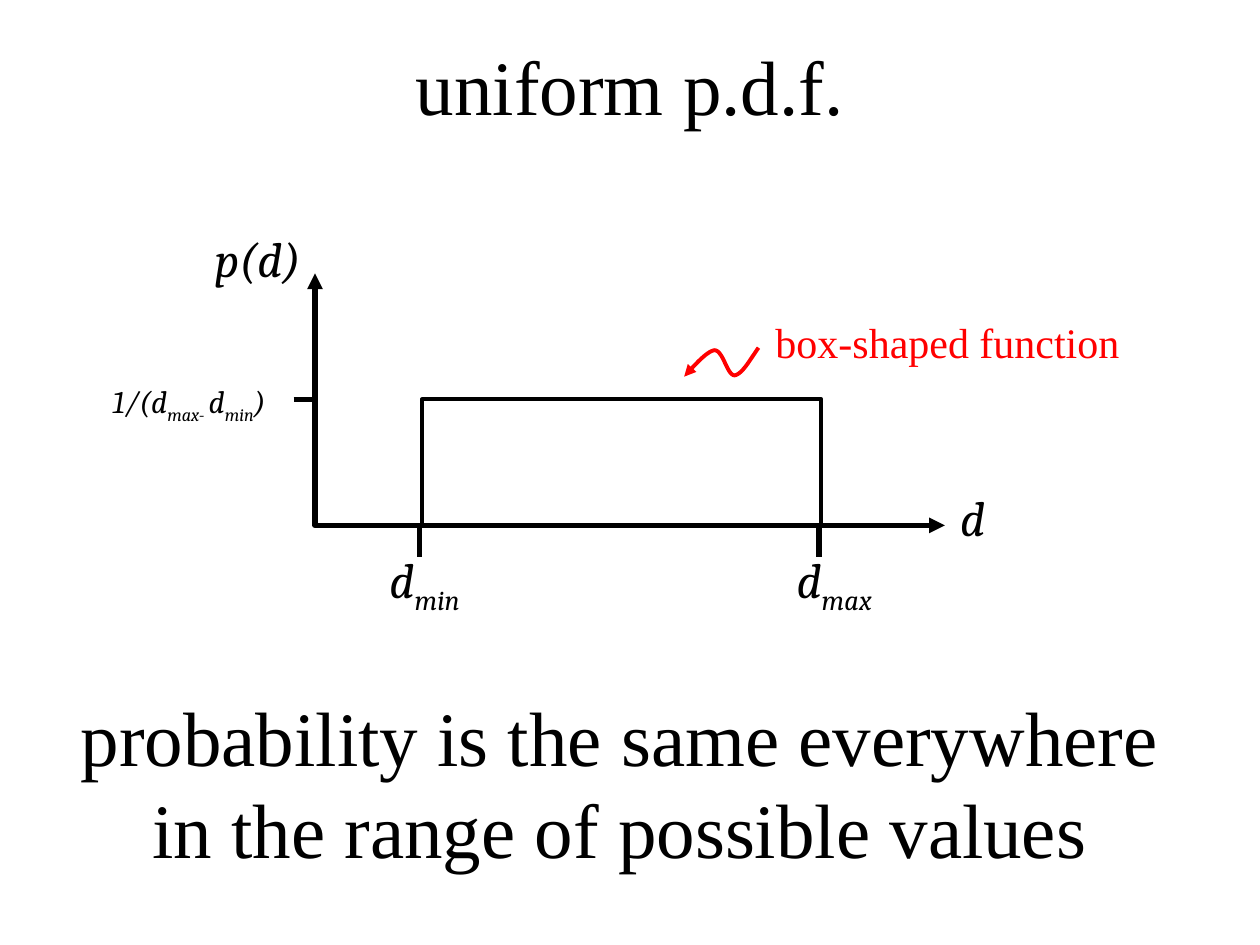
from lxml import etree
from pptx import Presentation
from pptx.dml.color import RGBColor
from pptx.enum import shapes, text
from pptx.oxml import ns
from pptx.util import Inches, Pt

COLORS = {"ink": "000000", "accent": "FF0000"}
SERIF, MATH = "Times New Roman", "Cambria"


def style_outline(shape, color, width, ends=()):
    """Give a shape or connector a round-joined line, arrowheads and no shadow."""
    shape.line.color.rgb = RGBColor.from_string(COLORS[color])
    shape.line.width = Pt(width)
    line = shape.line._get_or_add_ln()
    etree.SubElement(line, ns.qn("a:round"))
    for end in ends:
        etree.SubElement(line, ns.qn(f"a:{end}"), type="triangle")
    if hasattr(shape, "shadow"):
        shape.shadow.inherit = False
    else:
        etree.SubElement(shape._element.spPr, ns.qn("a:effectLst"))


def add_label(slide, box, pieces, size, font=SERIF, color="ink"):
    """Add centred text whose pieces alternate between normal and subscript."""
    shape = slide.shapes.add_textbox(*map(Inches, box))
    frame = shape.text_frame
    frame.word_wrap = True
    frame.vertical_anchor = text.MSO_ANCHOR.MIDDLE
    paragraph = frame.paragraphs[0]
    paragraph.alignment = text.PP_ALIGN.CENTER
    paragraph.font.name = font
    paragraph.font.size = Pt(size)
    paragraph.font.italic = font == MATH
    paragraph.font.color.rgb = RGBColor.from_string(COLORS[color])
    for index, piece in enumerate(pieces):
        run = paragraph.add_run()
        run.text = piece
        if index % 2:
            run._r.get_or_add_rPr().set("baseline", "-25000")


def add_open_line(slide, points, color, width, ends):
    """Draw an unfilled open outline through points given in inches."""
    points = [(Inches(x), Inches(y)) for x, y in points]
    builder = slide.shapes.build_freeform(*points[0])
    builder.add_line_segments(points[1:], close=False)
    shape = builder.convert_to_shape()
    shape.fill.background()
    style_outline(shape, color, width, ends)


def add_tick(slide, start, end):
    """Draw an axis tick between two points."""
    tick = slide.shapes.add_connector(
        shapes.MSO_CONNECTOR.STRAIGHT, *map(Inches, (*start, *end)))
    style_outline(tick, "ink", 3)


def curve_points(start, segments, steps=16):
    """Return points along a chain of cubic Bezier segments."""
    points = [start]
    for first, second, end in segments:
        for step in range(1, steps + 1):
            t = step / steps
            weights = ((1 - t) ** 3, 3 * t * (1 - t) ** 2, 3 * t * t * (1 - t), t ** 3)
            points.append(tuple(
                sum(weight * value for weight, value in zip(weights, values))
                for values in zip(start, first, second, end)))
        start = end
    return points


def add_density_plot(slide, left, top, width, height):
    """Draw the axes, ticks, labels and box-shaped density."""
    base, right, level = top + height, left + width, top + height / 2
    add_open_line(slide, [(left, top), (left, base), (right, base)],
                  "ink", 3, ("headEnd", "tailEnd"))
    for offset, name in ((0.83, "min"), (4, "max")):
        x = left + offset
        add_tick(slide, (x, base), (x, base + 0.25))
        add_label(slide, (x - 0.5 + 0.08 * (name == "max"), base - 0.17, 1.08, 1.25),
                  ("d", name), 28, MATH)
    add_tick(slide, (left - 0.17, level), (left, level))
    box = slide.shapes.add_shape(
        shapes.MSO_SHAPE.RECTANGLE,
        *map(Inches, (left + 0.85, level, 3.17, base - level)))
    box.fill.background()
    style_outline(box, "ink", 2.25)
    add_label(slide, (right - 0.32, base - 0.69, 1.08, 1.25), ("d",), 28, MATH)
    add_label(slide, (left - 1.08, top - 0.75, 1.25, 1.25), ("p(d)",), 28, MATH)
    add_label(slide, (left - 2.5, level - 0.59, 3, 1.25),
              ("1/(d", "max- ", "d", "min", ")"), 18, MATH)


def add_callout(slide, left, top):
    """Draw the wavy arrow and its red remark."""
    segments = (((0.1, 0.14), (0.19, 0.04), (0.25, 0.03)),
                ((0.32, 0.03), (0.35, 0.23), (0.41, 0.23)),
                ((0.47, 0.22), (0.53, 0.11), (0.6, 0.01)))
    wave = curve_points((0.01, 0.24), segments)
    add_open_line(slide, [(left + x, top + y) for x, y in wave],
                  "accent", 2.25, ("headEnd",))
    add_label(slide, (left + 0.1, top - 0.66, 4, 1.25),
              ("box-shaped function",), 24, color="accent")


def main():
    """Build and save the slide."""
    presentation = Presentation()
    presentation.slide_width, presentation.slide_height = Inches(10), Inches(7.5)
    slide = presentation.slides.add_slide(presentation.slide_layouts[6])
    add_label(slide, (0.5, 0.05, 9, 1.25), ("uniform p.d.f.",), 44)
    add_density_plot(slide, 2.5, 2.17, 5, 2)
    add_label(slide, (0.42, 5.58, 9, 1.25),
              ("probability is the same everywhere in the range of possible values",), 44)
    add_callout(slide, 5.42, 2.75)
    presentation.save("out.pptx")


if __name__ == "__main__":
    main()
